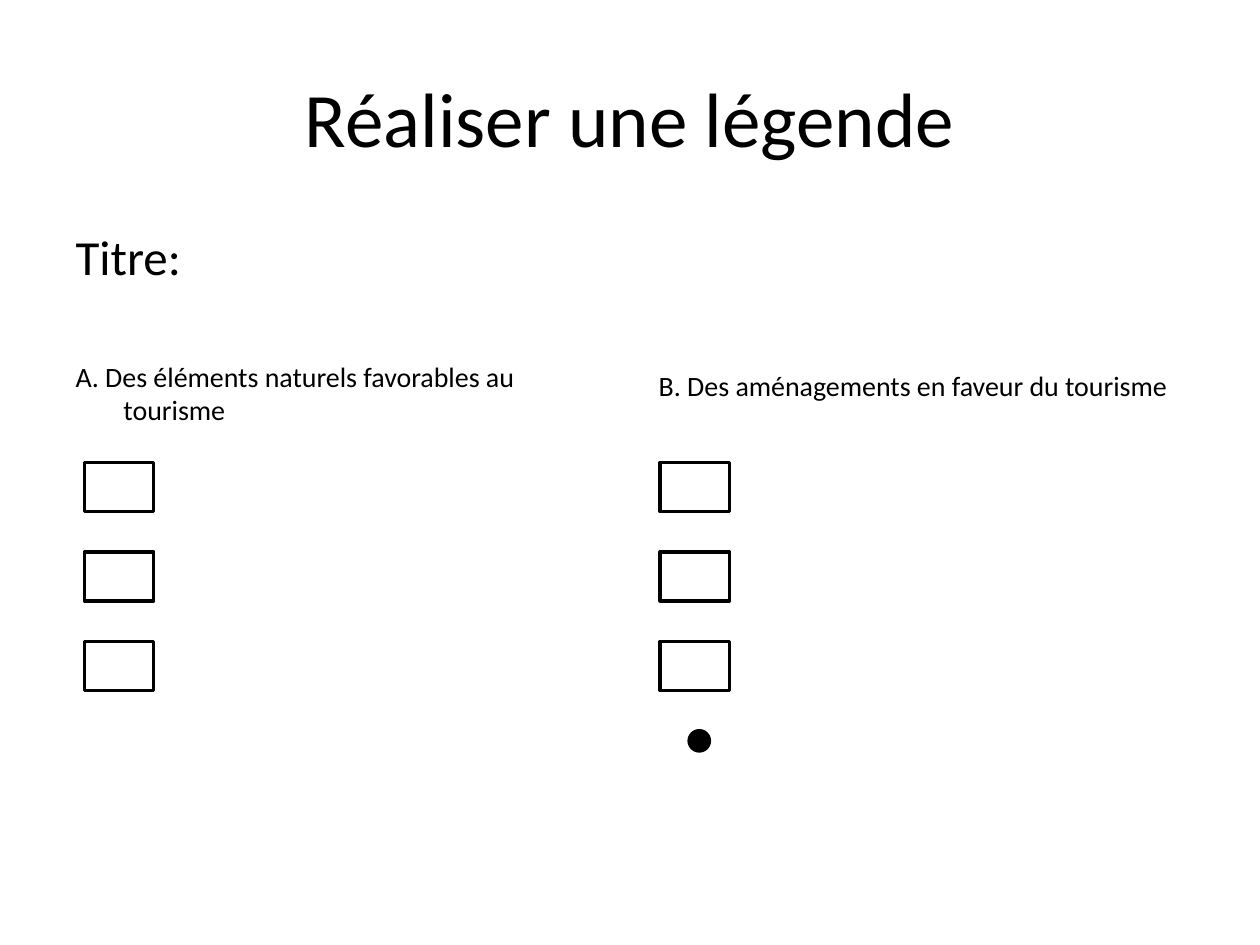
import pptx
import pptx.dml.color
import pptx.enum.shapes
import pptx.enum.text
import pptx.util
from pptx.util import Inches

COLORS = {"ink": "000000"}
FONT = "Calibri"
BOX_LEFTS = (0.67, 5.24)
BOX_TOP = 3.67
BOX_STEP = 0.71
BOX_COUNT = 3


def ink():
    return pptx.dml.color.RGBColor.from_string(COLORS["ink"])


def place(shape, left, top, width, height):
    shape.left, shape.top = Inches(left), Inches(top)
    shape.width, shape.height = Inches(width), Inches(height)


def write(para, text, size):
    para.text = text
    para.font.name = FONT
    para.font.size = pptx.util.Pt(size)
    para.font.color.rgb = ink()


def add_title(page, text):
    title = page.shapes.title
    place(title, 0.5, 0.3, 9, 1.25)
    title.text_frame.vertical_anchor = pptx.enum.text.MSO_ANCHOR.MIDDLE
    para = title.text_frame.paragraphs[0]
    write(para, text, 44)
    para.alignment = pptx.enum.text.PP_ALIGN.CENTER


def add_body(page, entries):
    body = page.placeholders[1]
    place(body, 0.5, 1.75, 4.26, 4.95)
    frame = body.text_frame
    for index, (text, size, space_before) in enumerate(entries):
        para = frame.add_paragraph() if index else frame.paragraphs[0]
        write(para, text, size)
        para.space_before = pptx.util.Pt(space_before)
        properties = para._p.get_or_add_pPr()
        properties.set("marL", str(Inches(0.38)))
        properties.set("indent", str(Inches(-0.38)))
        pptx.oxml.xmlchemy.OxmlElement
        properties.append(pptx.oxml.xmlchemy.OxmlElement("a:buNone"))


def add_heading(page, text):
    box = page.shapes.add_textbox(Inches(5.13), Inches(2.88), Inches(4.34), Inches(0.37))
    box.text_frame.word_wrap = False
    box.text_frame.auto_size = pptx.enum.text.MSO_AUTO_SIZE.SHAPE_TO_FIT_TEXT
    write(box.text_frame.paragraphs[0], text, 16)


def add_symbol(page, kind, left, top, width, height, filled=False):
    symbol = page.shapes.add_shape(
        kind, Inches(left), Inches(top), Inches(width), Inches(height))
    symbol.shadow.inherit = False
    if filled:
        symbol.fill.solid()
        symbol.fill.fore_color.rgb = ink()
    else:
        symbol.fill.background()
    symbol.line.color.rgb = ink()
    symbol.line.width = pptx.util.Pt(2)


def main():
    deck = pptx.Presentation()
    deck.slide_width, deck.slide_height = Inches(10), Inches(7.5)
    page = deck.slides.add_slide(deck.slide_layouts[1])
    kinds = pptx.enum.shapes.MSO_SHAPE

    add_title(page, "Réaliser une légende")
    add_body(page, [
        ("Titre:", 28, 0),
        ("A. Des éléments naturels favorables au tourisme", 16, 42),
    ])
    add_heading(page, "B. Des aménagements en faveur du tourisme")
    for left in BOX_LEFTS:
        for row in range(BOX_COUNT):
            add_symbol(page, kinds.RECTANGLE, left, BOX_TOP + row * BOX_STEP, 0.55, 0.39)
    add_symbol(page, kinds.OVAL, 5.47, 5.8, 0.16, 0.16, filled=True)

    deck.save("out.pptx")


if __name__ == "__main__":
    main()
